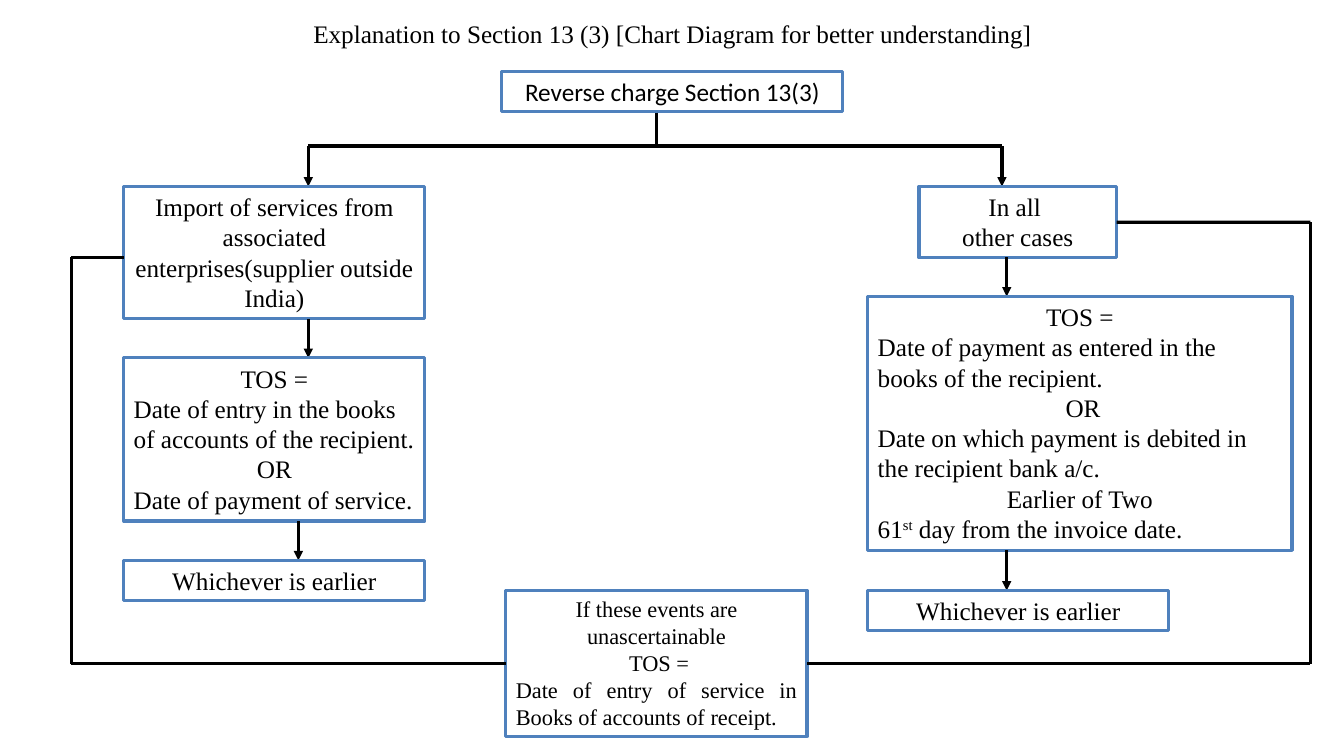
from pptx import Presentation
from pptx.dml.color import RGBColor
from pptx.enum.shapes import MSO_CONNECTOR, MSO_SHAPE
from pptx.enum.text import MSO_ANCHOR, MSO_AUTO_SIZE, PP_ALIGN
from pptx.oxml.ns import qn
from pptx.util import Cm, Pt
from lxml.etree import SubElement

COLORS = {"text": "000000", "fill": "FFFFFF", "border": "4F81BD", "line": "000000"}
SERIF, SANS = "Times New Roman", "Calibri"
CENTER, LEFT, JUSTIFY = PP_ALIGN.CENTER, PP_ALIGN.LEFT, PP_ALIGN.JUSTIFY
LINE_WIDTH = Pt(2.25)
TOP, LEFT_SIDE, BOTTOM, RIGHT_SIDE = range(4)

# Columns, box sizes and rows in centimetres
LEFT_BOX, RIGHT_BOX, MIDDLE_BOX = 3.12, 21.87, 12.75
BOX_WIDTH, ROW_HEIGHT = 7.59, 1.02
LEFT_ARROW, RIGHT_ARROW = 7.77, 25.25
LEFT_LOOP, RIGHT_LOOP = 1.8, 33.02
BUS, BRANCH_TOP, LOOP_BOTTOM = 3.68, 4.7, 16.72


def color(name):
    return RGBColor.from_string(COLORS[name])


def format_runs(paragraph, size, font_name):
    for run in paragraph.runs:
        run.font.size = Pt(size)
        run.font.name = font_name
        run.font.color.rgb = color("text")


def add_title(slide, text):
    title = slide.shapes.title
    title.left, title.top, title.width, title.height = Cm(1.8), Cm(0.33), Cm(30.3), Cm(1.02)
    frame = title.text_frame
    frame.text = text
    frame.auto_size = MSO_AUTO_SIZE.NONE
    frame.vertical_anchor = MSO_ANCHOR.TOP
    paragraph = frame.paragraphs[0]
    paragraph.alignment = CENTER
    paragraph.line_spacing = 1
    paragraph.space_before = Pt(0)
    format_runs(paragraph, 18, SERIF)


def add_box(slide, left, top, width, height, paragraphs, size=18, font_name=SERIF):
    """Each paragraph is an alignment and its runs; every second run is superscript."""
    box = slide.shapes.add_shape(MSO_SHAPE.RECTANGLE, Cm(left), Cm(top), Cm(width), Cm(height))
    box.shadow.inherit = False
    box.fill.solid()
    box.fill.fore_color.rgb = color("fill")
    box.line.color.rgb = color("border")
    box.line.width = LINE_WIDTH
    frame = box.text_frame
    frame.word_wrap = True
    frame.vertical_anchor = MSO_ANCHOR.TOP
    for index, (alignment, *texts) in enumerate(paragraphs):
        paragraph = frame.add_paragraph() if index else frame.paragraphs[0]
        paragraph.alignment = alignment
        for position, text in enumerate(texts):
            run = paragraph.add_run()
            run.text = text
            if position % 2:
                run.font._element.set("baseline", "30000")
        format_runs(paragraph, size, font_name)
    return box


def add_line(slide, start, end, arrow=False):
    line = slide.shapes.add_connector(MSO_CONNECTOR.STRAIGHT, *map(Cm, start + end))
    line.line.color.rgb = color("line")
    line.line.width = LINE_WIDTH
    if arrow:
        SubElement(line.line._get_or_add_ln(), qn("a:tailEnd"), type="triangle")
    SubElement(line._element.spPr, qn("a:effectLst"))
    return line


def add_arrow(slide, x, top, bottom):
    add_line(slide, (x, top), (x, bottom), arrow=True)


def main():
    presentation = Presentation()
    presentation.slide_width, presentation.slide_height = Cm(33.87), Cm(19.05)
    slide = presentation.slides.add_slide(presentation.slide_layouts[5])
    add_title(slide, "Explanation to Section 13 (3) [Chart Diagram for better understanding]")

    # Root and its two branches
    add_box(slide, 12.65, 1.8, 8.59, ROW_HEIGHT,
            [(CENTER, "Reverse charge Section 13(3)")], font_name=SANS)
    add_line(slide, (16.54, 2.84), (16.54, BUS))
    add_line(slide, (LEFT_ARROW, BUS), (RIGHT_ARROW, BUS))
    for x in (LEFT_ARROW, RIGHT_ARROW):
        add_arrow(slide, x, BUS, BRANCH_TOP)

    # Left branch: import of services
    add_box(slide, LEFT_BOX, BRANCH_TOP, BOX_WIDTH, 3.33, [
        (CENTER, "Import of services from associated enterprises(supplier outside India)")])
    add_arrow(slide, LEFT_ARROW, 8.03, 9.02)
    add_box(slide, LEFT_BOX, 9.02, BOX_WIDTH, 4.11, [
        (CENTER, "TOS ="),
        (LEFT, "Date of entry in the books of accounts of the recipient."),
        (CENTER, "OR"),
        (LEFT, "Date of payment of service.")])
    add_arrow(slide, 7.52, 13.13, 14.12)

    # Right branch: all other cases
    other_cases = add_box(slide, 23.16, BRANCH_TOP, 4.98, 1.8, [
        (CENTER, "In all "), (CENTER, "other cases")])
    add_arrow(slide, 25.37, 6.48, 7.47)
    add_box(slide, RIGHT_BOX, 7.47, 10.69, 6.4, [
        (CENTER, "TOS ="),
        (LEFT, "Date of payment as entered in the books of the recipient."),
        (CENTER, " OR"),
        (LEFT, "Date on which payment is debited in the recipient bank a/c."),
        (CENTER, "Earlier of Two"),
        (LEFT, "61", "st", " day from the invoice date.")])
    add_arrow(slide, 25.37, 13.87, 14.88)

    # Closing box of each branch
    for left, top in ((LEFT_BOX, 14.12), (RIGHT_BOX, 14.88)):
        add_box(slide, left, top, BOX_WIDTH, ROW_HEIGHT, [(CENTER, "Whichever is earlier")])

    # Fallback box, looped back to both branches
    fallback = add_box(slide, MIDDLE_BOX, 14.88, BOX_WIDTH, 3.68, [
        (CENTER, "If these events are unascertainable"),
        (CENTER, " TOS ="),
        (JUSTIFY, "Date of entry of service in Books of accounts of receipt.")], size=16)
    for loop, side, branch_y in ((LEFT_LOOP, LEFT_SIDE, 6.48), (RIGHT_LOOP, RIGHT_SIDE, 5.6)):
        add_line(slide, (loop, branch_y), (loop, LOOP_BOTTOM))
        base = add_line(slide, (MIDDLE_BOX, LOOP_BOTTOM), (loop, LOOP_BOTTOM))
        base.begin_connect(fallback, side)
    add_line(slide, (LEFT_LOOP, 6.48), (LEFT_BOX, 6.48))
    right_link = add_line(slide, (28.14, 5.6), (RIGHT_LOOP, 5.6))
    right_link.begin_connect(other_cases, RIGHT_SIDE)

    presentation.save("out.pptx")


if __name__ == "__main__":
    main()
